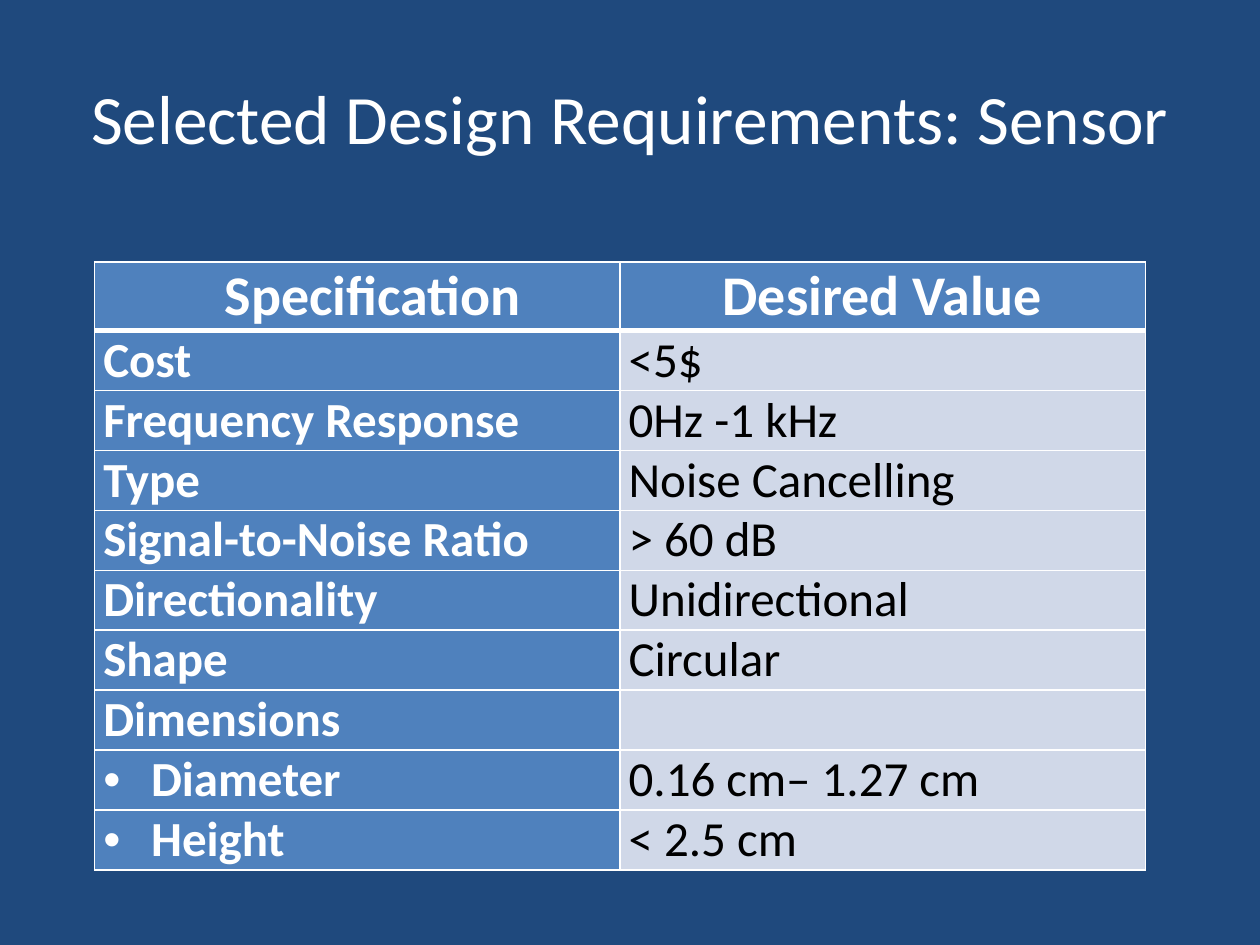
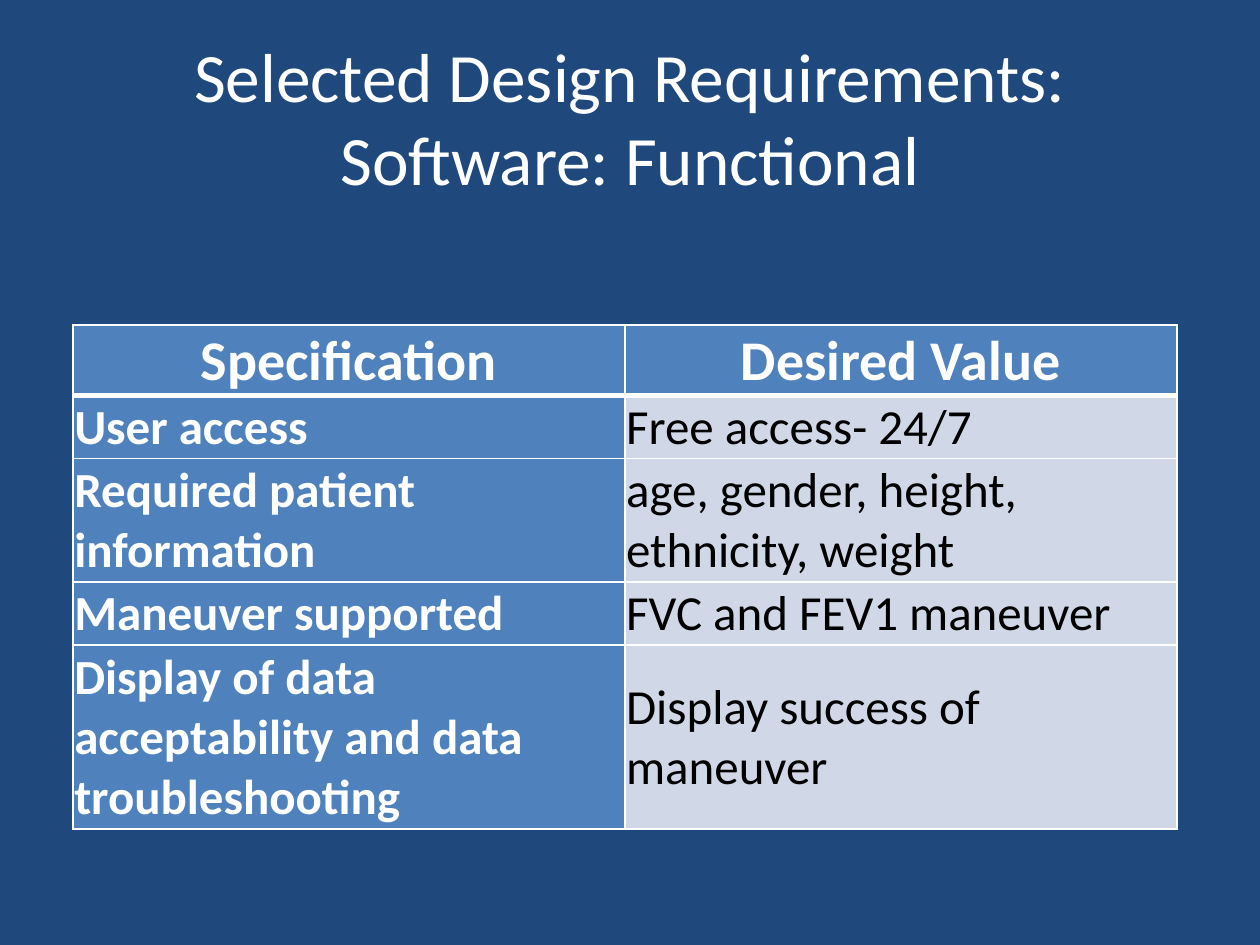
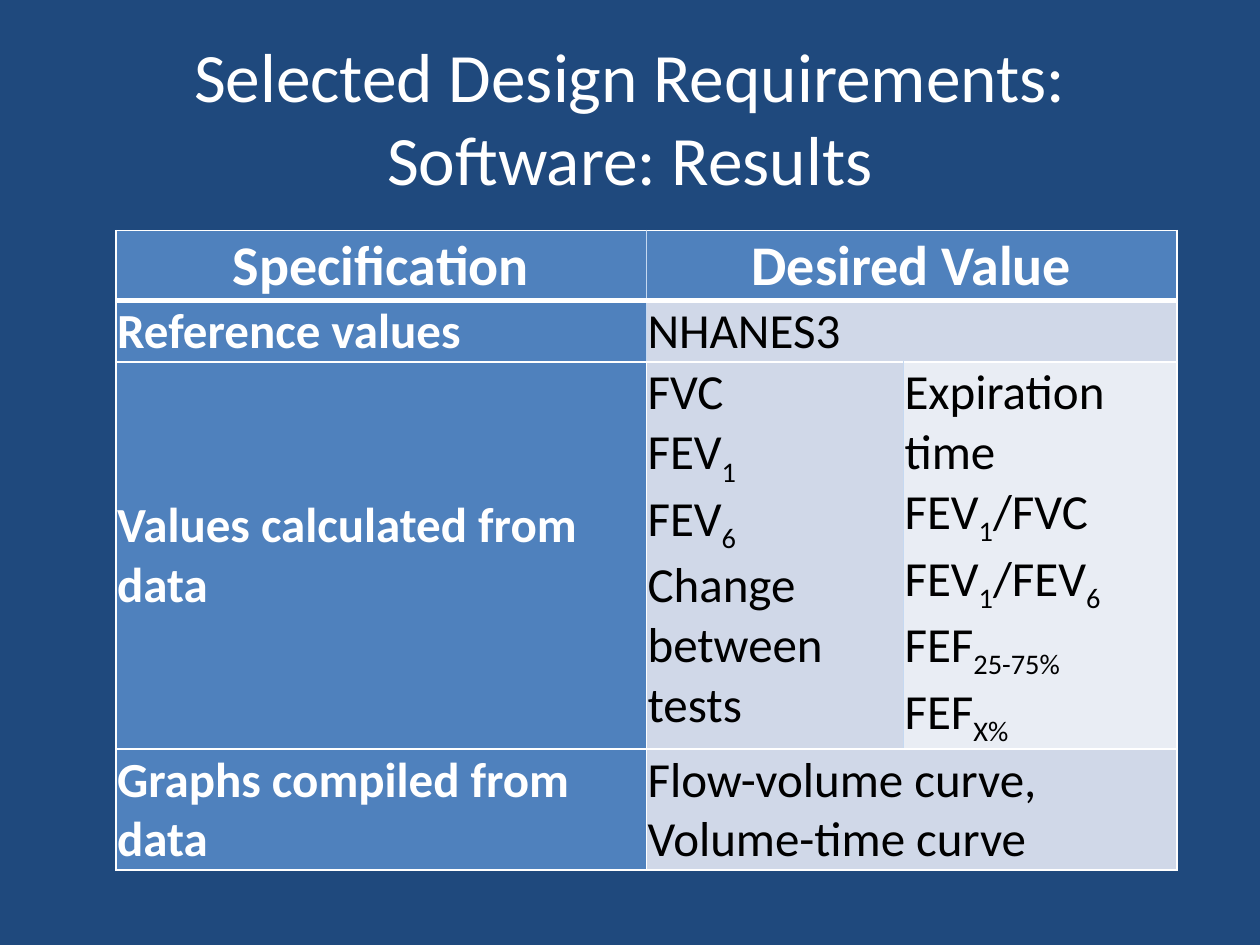
from dataclasses import dataclass

from lxml import etree
from pptx import Presentation
from pptx.dml.color import RGBColor
from pptx.enum.text import MSO_ANCHOR, MSO_AUTO_SIZE, PP_ALIGN
from pptx.oxml.ns import qn
from pptx.util import Inches, Pt

CENTER, LEFT = PP_ALIGN.CENTER, PP_ALIGN.LEFT
TOP, MIDDLE = MSO_ANCHOR.TOP, MSO_ANCHOR.MIDDLE
NO_AUTOFIT = MSO_AUTO_SIZE.NONE
TITLE_ONLY = 5
HEADERS = ["Specification", "Desired Value"]


@dataclass(frozen=True)
class Theme:
    # Colours
    background: str = "1F497D"
    label_fill: str = "4F81BD"
    value_fill: str = "D0D8E8"
    side_fill: str = "E9EDF4"
    light: str = "FFFFFF"
    dark: str = "000000"
    soft_line: str = "C6D9F1"
    # Type and line widths
    font: str = "Calibri"
    title_size: float = 39.6
    header_size: float = 32
    body_size: float = 28
    line: float = 1
    header_line: float = 3


@dataclass(frozen=True)
class CellLayout:
    anchor: int
    side: float
    top: float
    header_indent: float = 0


ROOMY = CellLayout(TOP, 0.07, 0, header_indent=0.25)
TIGHT = CellLayout(MIDDLE, 0.01, 0.01)


class Deck:
    def __init__(self, theme):
        self.theme = theme
        self.slide = None
        self.presentation = Presentation()
        self.presentation.slide_width = Inches(10)
        self.presentation.slide_height = Inches(7.5)
        fill = self.presentation.slide_master.background.fill
        fill.solid()
        fill.fore_color.rgb = RGBColor.from_string(theme.background)

    def add_slide(self, title):
        layout = self.presentation.slide_layouts[TITLE_ONLY]
        self.slide = self.presentation.slides.add_slide(layout)
        shape = self.slide.shapes.title
        shape.left, shape.top = Inches(0.5), Inches(0.3)
        shape.width, shape.height = Inches(9), Inches(1.25)
        frame = shape.text_frame
        frame.text = title
        frame.auto_size = NO_AUTOFIT
        frame.vertical_anchor = MIDDLE
        self.format_paragraph(frame.paragraphs[0], self.theme.title_size,
                              self.theme.light, False, CENTER)

    def add_table(self, left, top, widths, heights, rows, layout, soft_edges=()):
        """None joins a cell to the one before it; soft_edges lists the cells
        whose right side has the soft line."""
        shape = self.slide.shapes.add_table(
            len(rows), len(widths), Inches(left), Inches(top),
            Inches(sum(widths)), Inches(sum(heights)))
        table = shape.table
        table.first_row = table.horz_banding = False
        for column, width in zip(table.columns, widths):
            column.width = Inches(width)
        for row, height in zip(table.rows, heights):
            row.height = Inches(height)
        for r, texts in enumerate(rows):
            for c, text in enumerate(texts):
                cell = table.cell(r, c)
                self.format_cell(cell, r, c, soft_edges)
                if text is None:
                    table.cell(r, c - 1).merge(cell)
                else:
                    self.fill_cell(cell, text, r == 0, c == 0, layout)

    def format_cell(self, cell, r, c, soft_edges):
        theme = self.theme
        left = theme.soft_line if (r, c - 1) in soft_edges else theme.light
        right = theme.soft_line if (r, c) in soft_edges else theme.light
        above = theme.header_line if r == 1 else theme.line
        below = theme.header_line if r == 0 else theme.line
        self.add_border(cell, "a:lnL", left, theme.line)
        self.add_border(cell, "a:lnR", right, theme.line)
        self.add_border(cell, "a:lnT", theme.light, above)
        self.add_border(cell, "a:lnB", theme.light, below)
        if r == 0 or c == 0:
            color = theme.label_fill
        else:
            color = theme.value_fill if c == 1 else theme.side_fill
        cell.fill.solid()
        cell.fill.fore_color.rgb = RGBColor.from_string(color)

    def add_border(self, cell, tag, color, width):
        properties = cell._tc.get_or_add_tcPr()
        line = etree.SubElement(properties, qn(tag), w=str(Pt(width)))
        fill = etree.SubElement(line, qn("a:solidFill"))
        etree.SubElement(fill, qn("a:srgbClr"), val=color)

    def fill_cell(self, cell, text, is_header, is_label, layout):
        theme = self.theme
        lines = text.split("\n")
        cell.margin_left = cell.margin_right = Inches(layout.side)
        cell.margin_top, cell.margin_bottom = Inches(layout.top), 0
        cell.vertical_anchor = TOP if len(lines) > 1 else layout.anchor
        strong = is_header or is_label
        frame = cell.text_frame
        for number, line in enumerate(lines):
            paragraph = frame.add_paragraph() if number else frame.paragraphs[0]
            self.format_paragraph(
                paragraph, theme.header_size if is_header else theme.body_size,
                theme.light if strong else theme.dark, strong,
                CENTER if is_header else LEFT)
            if line.startswith("• "):
                self.add_bullet(paragraph)
            elif is_header and is_label and layout.header_indent:
                self.indent(paragraph, layout.header_indent, 0)
            self.add_runs(paragraph, line.removeprefix("• "))

    def add_runs(self, paragraph, line):
        """Text in braces is set as a subscript."""
        for position, part in enumerate(line.replace("}", "{").split("{")):
            if part:
                run = paragraph.add_run()
                run.text = part
                if position % 2:
                    run.font._element.set("baseline", "-25000")

    def indent(self, paragraph, margin, first_line):
        properties = paragraph._p.get_or_add_pPr()
        properties.set("marL", str(Inches(margin)))
        properties.set("indent", str(Inches(first_line)))
        return properties

    def add_bullet(self, paragraph):
        properties = self.indent(paragraph, 0.38, -0.38)
        font = etree.Element(qn("a:buFont"), typeface="Arial")
        bullet = etree.Element(qn("a:buChar"), char="•")
        defaults = properties.find(qn("a:defRPr"))
        defaults.addprevious(font)
        defaults.addprevious(bullet)

    def format_paragraph(self, paragraph, size, color, bold, alignment):
        paragraph.alignment = alignment
        font = paragraph.font
        font.name, font.size, font.bold = self.theme.font, Pt(size), bold
        font.color.rgb = RGBColor.from_string(color)


def main():
    deck = Deck(Theme())

    # Sensor requirements
    sensor_rows = [
        HEADERS,
        ["Cost", "<5$"],
        ["Frequency Response", "0Hz -1 kHz"],
        ["Type", "Noise Cancelling"],
        ["Signal-to-Noise Ratio", "> 60 dB"],
        ["Directionality", "Unidirectional"],
        ["Shape", "Circular"],
        ["Dimensions", ""],
        ["• Diameter", "0.16 cm– 1.27 cm"],
        ["• Height", "< 2.5 cm"],
    ]
    deck.add_slide("Selected Design Requirements: Sensor")
    deck.add_table(0.75, 2.08, [4.17] * 2,
                   [0.54] + [0.47] * (len(sensor_rows) - 1), sensor_rows, ROOMY)

    # Functional software requirements
    deck.add_slide("Selected Design Requirements: Software: Functional")
    deck.add_table(0.58, 2.58, [4.38] * 2, [0.56, 0.5, 0.98, 0.5, 1.46], [
        HEADERS,
        ["User access", "Free access- 24/7"],
        ["Required patient information", "age, gender, height, ethnicity, weight"],
        ["Maneuver supported", "FVC and FEV1 maneuver"],
        ["Display of data acceptability and data troubleshooting",
         "Display success of maneuver"],
    ], TIGHT)

    # Software results
    deck.add_slide("Selected Design Requirements: Software: Results")
    deck.add_table(0.92, 1.83, [4.21, 2.04, 2.17], [0.55, 0.49, 3.07, 0.96], [
        HEADERS + [None],
        ["Reference values", "NHANES3", None],
        ["Values calculated from data",
         "FVC\nFEV{1}\nFEV{6}\nChange between tests",
         "Expiration time\nFEV{1}/FVC\nFEV{1}/FEV{6}\nFEF{25-75%}\nFEF{X%}"],
        ["Graphs compiled from data", "Flow-volume curve, Volume-time curve", None],
    ], TIGHT, soft_edges={(0, 0), (1, 0), (2, 1)})

    deck.presentation.save("out.pptx")


if __name__ == "__main__":
    main()
